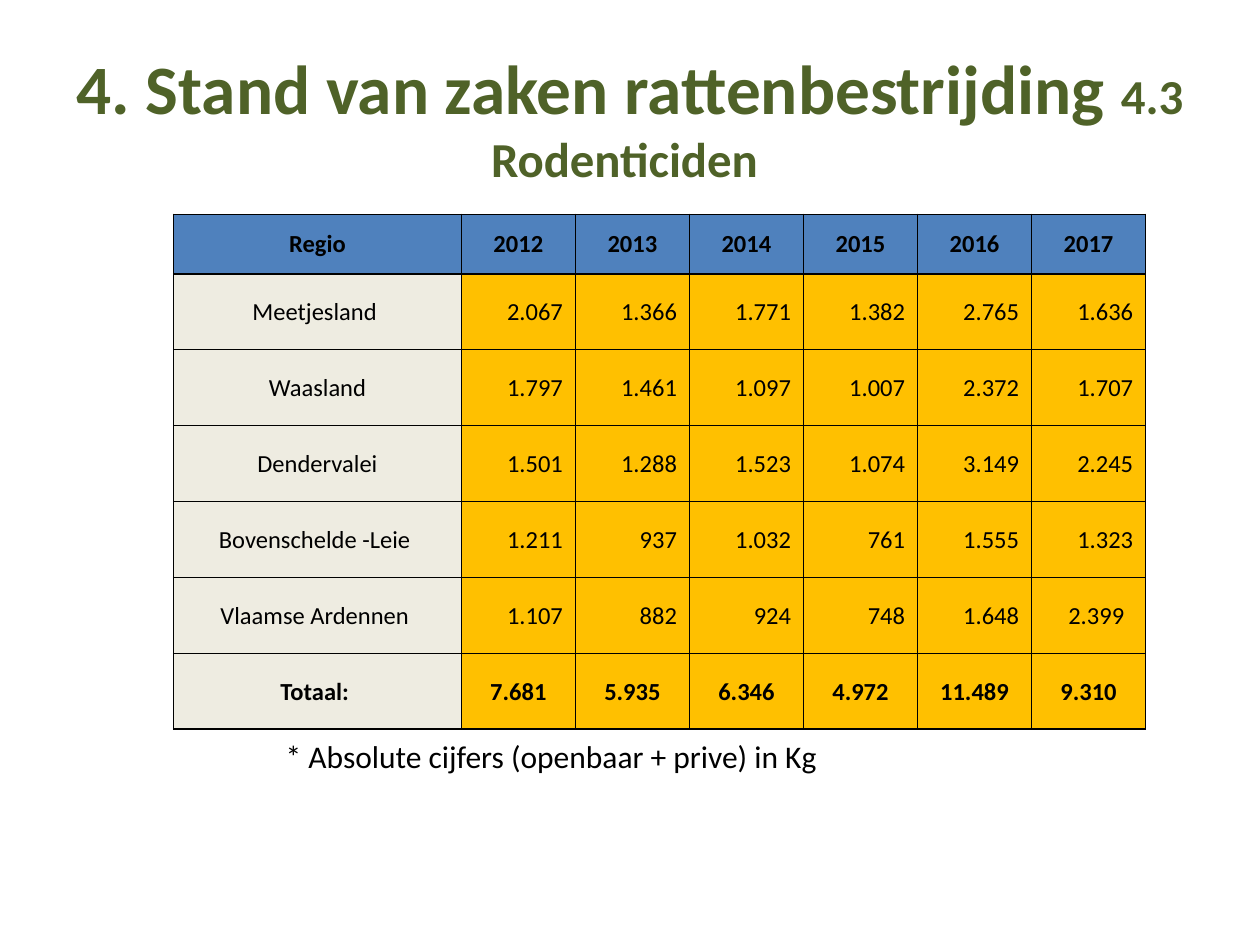
from lxml.etree import SubElement
from pptx import Presentation
from pptx.dml.color import RGBColor
from pptx.enum.text import MSO_ANCHOR as Anchor, MSO_AUTO_SIZE as AutoSize, PP_ALIGN as Align
from pptx.oxml.ns import qn
from pptx.util import Cm, Pt

FONT = "Calibri"
BLACK, GREEN = "000000", "4F6228"
HEADER_FILL, REGION_FILL, VALUE_FILL = "4F81BD", "EEECE1", "FFC000"

ROWS = [
    ["Regio", "2012", "2013", "2014", "2015", "2016", "2017"],
    ["Meetjesland ", "2.067", "1.366", "1.771", "1.382", "2.765", "1.636"],
    ["Waasland", "1.797", "1.461", "1.097", "1.007", "2.372", "1.707"],
    ["Dendervalei", "1.501", "1.288", "1.523", "1.074", "3.149", "2.245"],
    ["Bovenschelde -Leie ", "1.211", "937", "1.032", "761", "1.555", "1.323"],
    ["Vlaamse Ardennen ", "1.107", "882", "924", "748", "1.648", "2.399"],
    ["Totaal: ", "7.681", "5.935", "6.346", "4.972", "11.489", "9.310"],
]


def colour(value):
    return RGBColor.from_string(value)


def add_run(paragraph, text, size, ink=BLACK, bold=False):
    run = paragraph.add_run()
    run.text = text
    run.font.name = FONT
    run.font.size = Pt(size)
    run.font.bold = bold
    run.font.color.rgb = colour(ink)


def add_borders(cell):
    """Draw a thin black line on all four sides of a cell."""
    properties = cell._tc.get_or_add_tcPr()
    for position, side in enumerate(("a:lnL", "a:lnR", "a:lnT", "a:lnB")):
        line = SubElement(properties, qn(side), w=str(Pt(1)))
        fill = SubElement(line, qn("a:solidFill"))
        SubElement(fill, qn("a:srgbClr"), val=BLACK)
        properties.insert(position, line)


def fill_cell(cell, text, fill, bold, align, margin_right):
    cell.fill.solid()
    cell.fill.fore_color.rgb = colour(fill)
    cell.vertical_anchor = Anchor.MIDDLE
    cell.margin_left = cell.margin_top = Cm(0.02)
    cell.margin_right = Cm(margin_right)
    cell.margin_bottom = 0
    paragraph = cell.text_frame.paragraphs[0]
    paragraph.alignment = align
    add_run(paragraph, text, 14, bold=bold)
    add_borders(cell)


def set_title(slide):
    title = slide.shapes.title
    title.left, title.top = Cm(1.27), Cm(0.76)
    title.width, title.height = Cm(22.86), Cm(3.18)
    frame = title.text_frame
    frame.auto_size = AutoSize.NONE
    frame.vertical_anchor = Anchor.MIDDLE
    heading = frame.paragraphs[0]
    heading.alignment = Align.CENTER
    add_run(heading, "4. Stand van zaken rattenbestrijding ", 39.6, GREEN, True)
    add_run(heading, "4.3 Rodenticiden ", 27.9, GREEN, True)


def add_rodenticide_table(slide):
    table = slide.shapes.add_table(
        len(ROWS), len(ROWS[0]), Cm(3.5), Cm(4.32), Cm(19.6), Cm(10.38)).table
    for index, column in enumerate(table.columns):
        column.width = Cm(2.3 if index else 5.8)
    for index, row in enumerate(table.rows):
        row.height = Cm(1.53 if index else 1.2)

    last = len(ROWS) - 1
    for r, values in enumerate(ROWS):
        for c, text in enumerate(values):
            fill = HEADER_FILL if r == 0 else VALUE_FILL if c else REGION_FILL
            bold = r in (0, last)
            # Yearly amounts line up on the right, everything else is centred
            if c and not bold:
                margin = 0.43 if text == "2.399" else 0.25
                fill_cell(table.cell(r, c), text, fill, bold, Align.RIGHT, margin)
            else:
                fill_cell(table.cell(r, c), text, fill, bold, Align.CENTER, 0.02)


def add_footnote(slide):
    footnote = slide.shapes.add_textbox(Cm(5.51), Cm(14.73), Cm(13.4), Cm(1.03))
    frame = footnote.text_frame
    frame.word_wrap = True
    frame.auto_size = AutoSize.SHAPE_TO_FIT_TEXT
    add_run(frame.paragraphs[0], "* Absolute cijfers (openbaar + prive) in Kg", 18)


def main():
    deck = Presentation()
    deck.slide_width, deck.slide_height = Cm(25.4), Cm(19.05)
    slide = deck.slides.add_slide(deck.slide_layouts[5])
    set_title(slide)
    add_footnote(slide)
    add_rodenticide_table(slide)
    deck.save("out.pptx")


if __name__ == "__main__":
    main()
